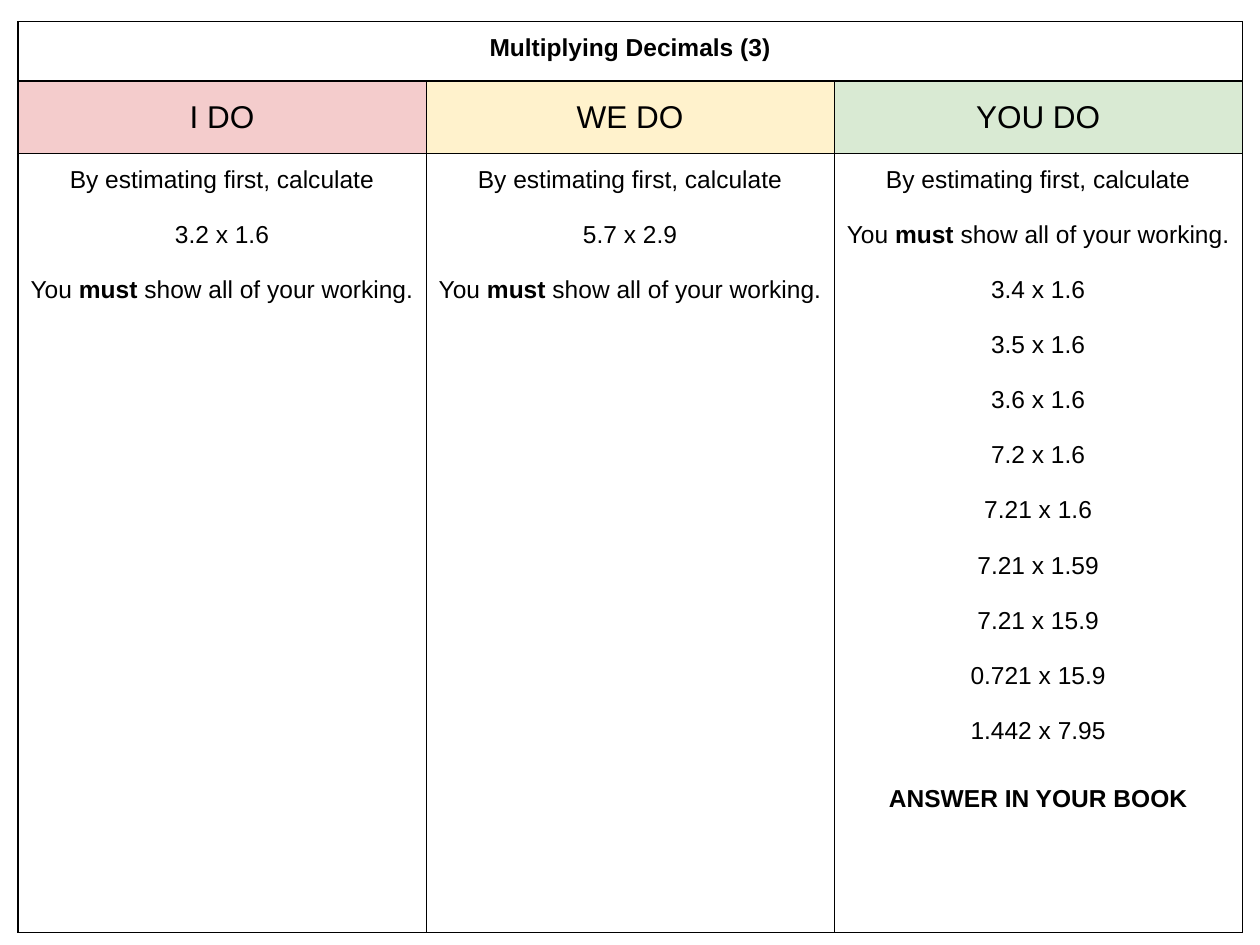
import pptx
import pptx.util
import pptx.dml.color
import pptx.enum.text
import pptx.oxml
import pptx.oxml.ns

Pt = pptx.util.Pt
CENTER = pptx.enum.text.PP_ALIGN.CENTER
TOP = pptx.enum.text.MSO_ANCHOR.TOP
MIDDLE = pptx.enum.text.MSO_ANCHOR.MIDDLE
COLORS = {"ink": "000000", "i_do": "F4CCCC", "we_do": "FFF2CC", "you_do": "D9EAD3"}

ESTIMATE = "By estimating first, calculate"
WORKING = "You *must* show all of your working."
FINISH = "*ANSWER IN YOUR BOOK*"
PRACTICE = ["3.4 x 1.6", "3.5 x 1.6", "3.6 x 1.6", "7.2 x 1.6", "7.21 x 1.6",
            "7.21 x 1.59", "7.21 x 15.9", "0.721 x 15.9", "1.442 x 7.95"]
LESSON = [
    ("I DO", "i_do", [ESTIMATE, "3.2 x 1.6", WORKING]),
    ("WE DO", "we_do", [ESTIMATE, "5.7 x 2.9", WORKING]),
    ("YOU DO", "you_do", [ESTIMATE, WORKING, *PRACTICE, FINISH]),
]


def style_cell(cell, fill=None, anchor=TOP):
    settings = {"margin_left": Pt(6.8), "margin_right": Pt(6.8), "margin_top": Pt(7.2),
                "margin_bottom": Pt(7.2), "vertical_anchor": anchor}
    for name, value in settings.items():
        setattr(cell, name, value)
    properties = cell._tc.get_or_add_tcPr()
    for edge in ("lnL", "lnR", "lnT", "lnB"):
        properties.append(pptx.oxml.parse_xml(
            f'<a:{edge} {pptx.oxml.ns.nsdecls("a")} w="{Pt(0.75)}"><a:solidFill>'
            f'<a:srgbClr val="{COLORS["ink"]}"/></a:solidFill></a:{edge}>'))
    if fill:
        cell.fill.solid()
        cell.fill.fore_color.rgb = pptx.dml.color.RGBColor.from_string(COLORS[fill])
    else:
        cell.fill.background()


def write_lines(cell, lines, size=14):
    for index, line in enumerate(lines):
        para = cell.text_frame.paragraphs[0] if index == 0 else cell.text_frame.add_paragraph()
        layout = {"alignment": CENTER, "space_before": Pt(15.75 if index else 0)}
        if line == FINISH:
            layout.update(line_spacing=1.25, space_before=Pt(19.5))
        for name, value in layout.items():
            setattr(para, name, value)
        for position, text in enumerate(line.split("*")):
            if not text:
                continue
            span = para.add_run()
            span.text = text
            for name, value in {"name": "Arial", "size": Pt(size), "bold": position % 2 == 1}.items():
                setattr(span.font, name, value)
            span.font.color.rgb = pptx.dml.color.RGBColor.from_string(COLORS["ink"])


deck = pptx.Presentation()
deck.slide_width, deck.slide_height = Pt(720), Pt(540)
page = deck.slides.add_slide(deck.slide_layouts[6])

row_heights = [34, 41.4, 445]
column_width = 233.2
table = page.shapes.add_table(3, 3, Pt(10.3), Pt(12.3),
                              Pt(3 * column_width), Pt(sum(row_heights))).table
for name in ("first_row", "horz_banding"):
    setattr(table, name, False)
for row, height in zip(table.rows, row_heights):
    row.height = Pt(height)

for index, (heading, color, lines) in enumerate(LESSON):
    table.columns[index].width = Pt(column_width)
    style_cell(table.cell(0, index))
    style_cell(table.cell(1, index), color, MIDDLE)
    style_cell(table.cell(2, index))
    write_lines(table.cell(1, index), [heading], 18)
    write_lines(table.cell(2, index), lines)

table.cell(0, 0).merge(table.cell(0, 2))
write_lines(table.cell(0, 0), ["*Multiplying Decimals (3)*"])

deck.save("out.pptx")
